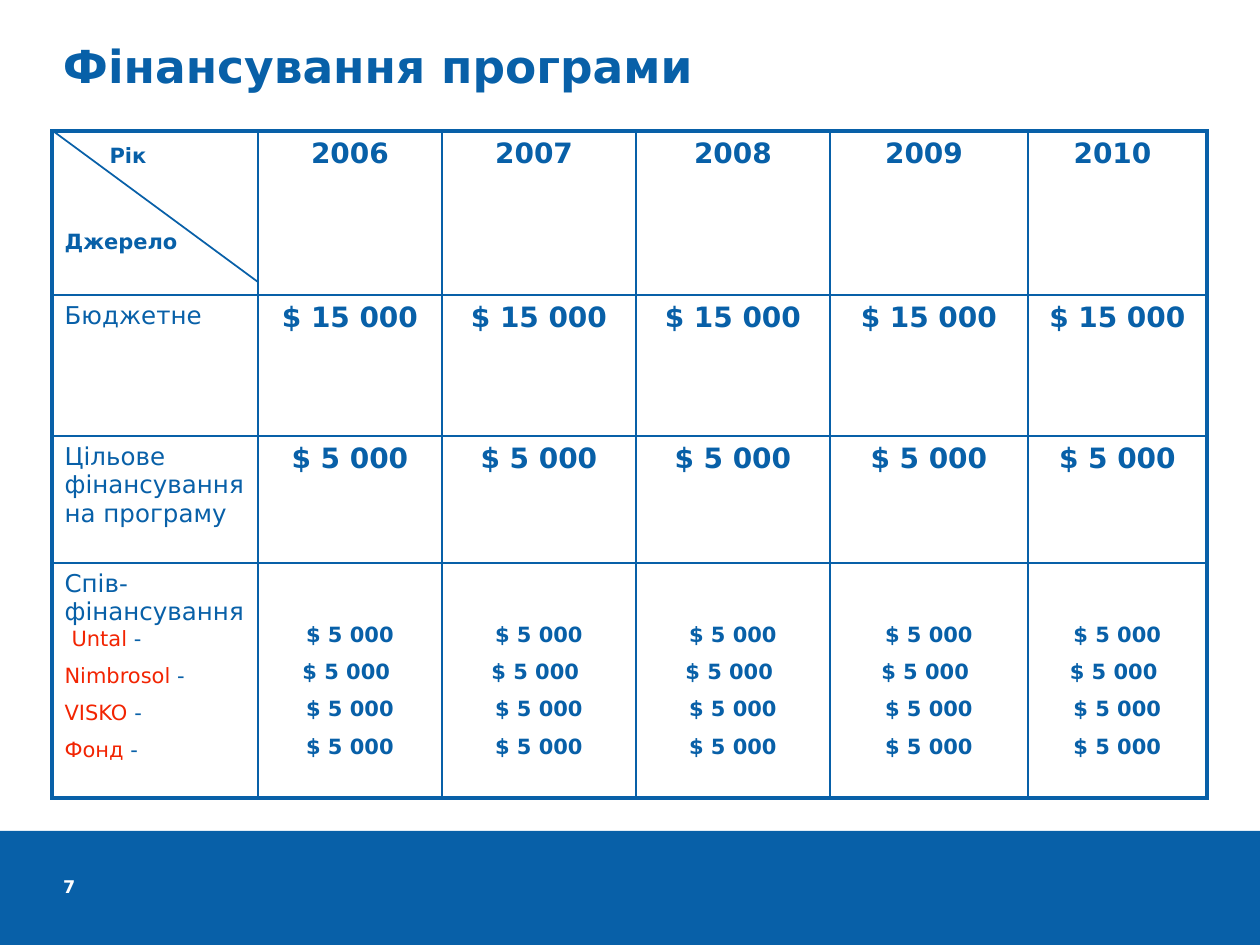
import pptx
import pptx.util
import pptx.dml.color
import pptx.enum.shapes
import pptx.enum.text
import pptx.oxml
import pptx.oxml.ns
import lxml.etree

BLUE, RED, WHITE = "0860A8", "F22402", "FFFFFF"
FONT = "DejaVu Sans"
SCALE = 914400 // 126


def color(code):
    return pptx.dml.color.RGBColor.from_string(code)


def style(para, size, bold=False, inks=(BLUE,)):
    for run, ink in zip(para.runs, inks):
        run.font.name = FONT
        run.font.size = pptx.util.Pt(size)
        run.font.bold = bold
        run.font.color.rgb = color(ink)


deck = pptx.Presentation()
deck.slide_width, deck.slide_height = 1260 * SCALE, 945 * SCALE
slide = deck.slides.add_slide(deck.slide_layouts[6])
shapes = slide.shapes

band = shapes.add_shape(
    pptx.enum.shapes.MSO_SHAPE.RECTANGLE,
    0, 831 * SCALE, 1260 * SCALE, 114 * SCALE)
band.shadow.inherit = False
band.fill.solid()
band.fill.fore_color.rgb = color(BLUE)
band.line.fill.background()

labels = [
    ("7", 876, 57, 41, 10, WHITE),
    ("Фінансування програми", 38, 1135, 122, 26, BLUE),
]
for text, top, width, height, size, ink in labels:
    box = shapes.add_textbox(63 * SCALE, top * SCALE, width * SCALE, height * SCALE)
    frame = box.text_frame
    frame.margin_left = frame.margin_right = 0
    frame.margin_top = frame.margin_bottom = 0
    frame.word_wrap = True
    frame.text = text
    style(frame.paragraphs[0], size, True, (ink,))

widths = [206, 184, 194, 194, 198, 179]
heights = [164, 141, 127, 235]
grid = shapes.add_table(
    4, 6, 52 * SCALE, 131 * SCALE, sum(widths) * SCALE, sum(heights) * SCALE).table
grid.first_row = grid.horz_banding = False
for column, width in zip(grid.columns, widths):
    column.width = width * SCALE
for row, height in zip(grid.rows, heights):
    row.height = height * SCALE

years = ["2006", "2007 ", "2008", "2009 ", "2010 "]
shares = ["$ 5 000", "$ 5 000 ", "$ 5 000", "$ 5 000"]
rows = [
    ["Рік\nДжерело"] + years,
    ["Бюджетне"] + ["$ 15 000"] * 5,
    ["Цільове фінансування на програму"] + ["$ 5 000"] * 5,
    ["Спів-фінансування"] + ["\n".join(shares)] * 5,
]
for r, texts in enumerate(rows):
    for c, text in enumerate(texts):
        cell = grid.cell(r, c)
        cell.fill.background()
        cell.text_frame.text = text
        small = r == 3 or (r == 0 and c == 0)
        size = 14 if c == 0 and r > 0 else 12 if small else 16
        for i, para in enumerate(cell.text_frame.paragraphs):
            style(para, size, c > 0 or r == 0)
            if c > 0:
                para.alignment = pptx.enum.text.PP_ALIGN.CENTER
            if i > 0:
                para.space_before = pptx.util.Pt(7.2)
        if r == 3 and c > 0:
            cell.margin_top = 60 * SCALE
        edges = [("lnL", c == 0), ("lnR", c == 5), ("lnT", r == 0), ("lnB", r == 3)]
        props = cell._tc.get_or_add_tcPr()
        for i, (tag, outer) in enumerate(edges):
            props.insert(i, pptx.oxml.parse_xml(
                f'<a:{tag} {pptx.oxml.ns.nsdecls("a")} w="{28575 if outer else 12700}">'
                f'<a:solidFill><a:srgbClr val="{BLUE}"/></a:solidFill></a:{tag}>'))

head = grid.cell(0, 0)
head.margin_top = 13 * SCALE
year, source = head.text_frame.paragraphs
year._p.get_or_add_pPr().set("marL", str(45 * SCALE))
source.space_before = pptx.util.Pt(35)

donors = [("Untal", " -"), ("Nimbrosol", " -"), ("VISKO", " -"), ("Фонд", " -")]
for i, parts in enumerate(donors):
    para = grid.cell(3, 0).text_frame.add_paragraph()
    for part in parts:
        para.add_run().text = part
    style(para, 12, False, (RED, BLUE))
    if i == 0:
        para._p.get_or_add_pPr().set("marL", str(7 * SCALE))
    else:
        para.space_before = pptx.util.Pt(7.2)

slash = shapes.add_connector(
    pptx.enum.shapes.MSO_CONNECTOR.STRAIGHT,
    53 * SCALE, 131 * SCALE, 258 * SCALE, 282 * SCALE)
slash.line.color.rgb = color(BLUE)
slash.line.width = pptx.util.Pt(1)
lxml.etree.SubElement(slash._element.spPr, pptx.oxml.ns.qn("a:effectLst"))

deck.save("out.pptx")
